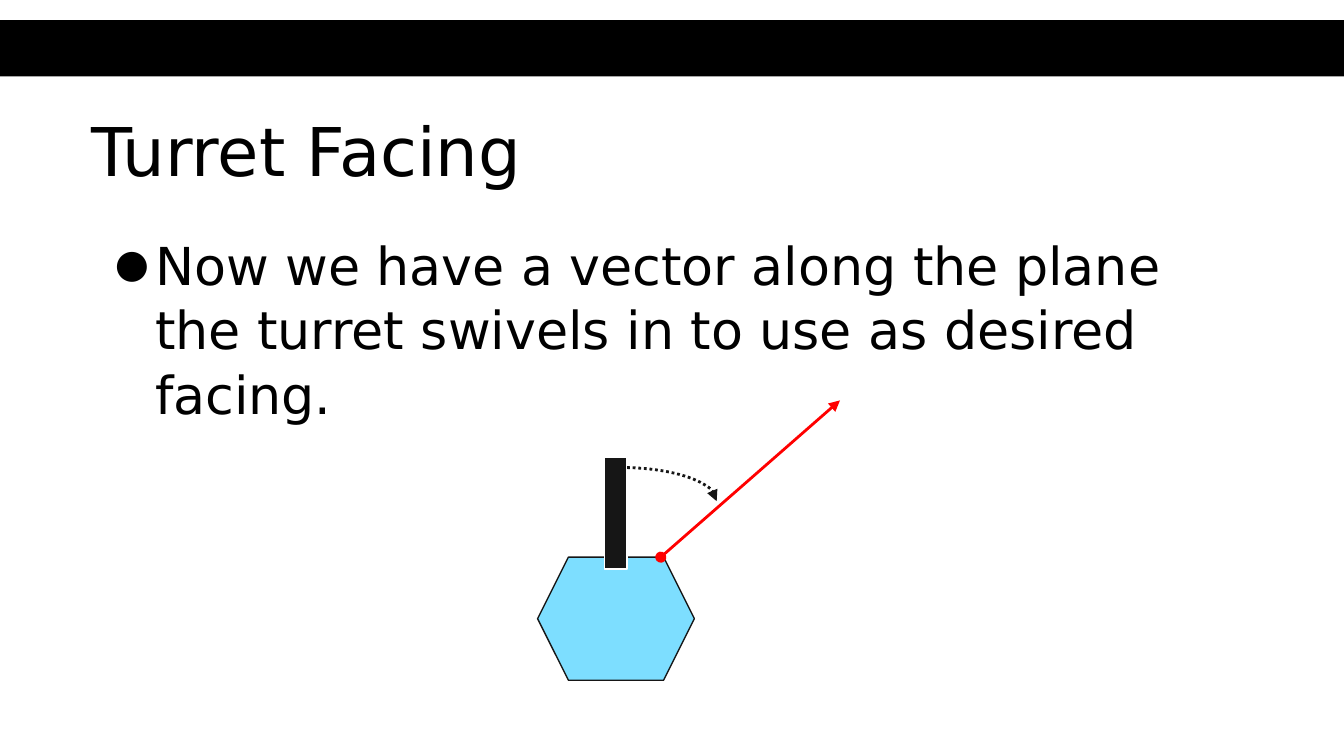
from dataclasses import dataclass
from typing import Optional

from lxml.etree import SubElement
from pptx import Presentation
from pptx.dml.color import RGBColor
from pptx.enum.dml import MSO_LINE_DASH_STYLE as Dash
from pptx.enum.shapes import MSO_CONNECTOR_TYPE as Connector
from pptx.enum.shapes import MSO_SHAPE as Shape
from pptx.enum.text import MSO_ANCHOR as Anchor
from pptx.enum.text import MSO_AUTO_SIZE as AutoSize
from pptx.enum.text import PP_ALIGN as Align
from pptx.oxml.ns import qn
from pptx.util import Pt


@dataclass(frozen=True)
class Theme:
    font: str = "DejaVu Sans"
    title_size: float = 36
    body_size: float = 28
    black: str = "000000"
    white: str = "FFFFFF"
    ink: str = "161616"
    base_blue: str = "7DDEFF"
    vector_red: str = "FF0000"
    thin: float = 0.75
    thick: float = 1.5


@dataclass(frozen=True)
class Part:
    kind: Shape
    left: float
    top: float
    width: float
    height: float
    fill: Optional[str] = None
    line: Optional[str] = None
    weight: float = 0


THEME = Theme()
BAND = Part(Shape.RECTANGLE, 0, 10.8, 720, 30.2, THEME.black)
TURRET = [
    Part(Shape.HEXAGON, 288, 298.5, 84, 66, THEME.base_blue, THEME.ink, THEME.thin),
    Part(Shape.RECTANGLE, 324, 244.8, 12, 60, THEME.ink, THEME.white, THEME.thin),
]
SWIVEL = Part(Shape.ARC, 282, 250.5, 102, 36, None, THEME.ink, THEME.thick)


def color(value: str) -> RGBColor:
    return RGBColor.from_string(value)


def draw_part(page, part: Part):
    shape = page.shapes.add_shape(
        part.kind, Pt(part.left), Pt(part.top), Pt(part.width), Pt(part.height)
    )
    shape.shadow.inherit = False
    if part.fill:
        shape.fill.solid()
        shape.fill.fore_color.rgb = color(part.fill)
    else:
        shape.fill.background()
    if part.line:
        shape.line.color.rgb = color(part.line)
        shape.line.width = Pt(part.weight)
    else:
        shape.line.fill.background()
    return shape


def add_line_ends(shape, head: Optional[str], tail: str) -> None:
    outline = shape.line._get_or_add_ln()
    if head:
        SubElement(outline, qn("a:headEnd"), type=head)
    SubElement(outline, qn("a:tailEnd"), type=tail)


def draw_vector(page) -> None:
    vector = page.shapes.add_connector(
        Connector.STRAIGHT, Pt(354), Pt(298.5), Pt(450), Pt(214.5)
    )
    vector.line.color.rgb = color(THEME.vector_red)
    vector.line.width = Pt(THEME.thick)
    add_line_ends(vector, "oval", "triangle")
    SubElement(vector._element.spPr, qn("a:effectLst"))


def write_text(box, text: str, size: float, inset_top: float):
    frame = box.text_frame
    frame.text = text
    frame.word_wrap = True
    frame.auto_size = AutoSize.NONE
    frame.vertical_anchor = Anchor.TOP
    frame.margin_left = frame.margin_right = Pt(7.2)
    frame.margin_top = Pt(inset_top)
    para = frame.paragraphs[0]
    para.alignment = Align.LEFT
    for span in para.runs:
        span.font.name = THEME.font
        span.font.size = Pt(size)
        span.font.color.rgb = color(THEME.black)
    return para


def add_bullet(para) -> None:
    props = para._p.get_or_add_pPr()
    props.set("marL", str(Pt(34)))
    props.set("indent", str(Pt(-21.6)))
    tint = SubElement(props, qn("a:buClr"))
    SubElement(tint, qn("a:srgbClr"), val=THEME.black)
    SubElement(props, qn("a:buSzPct"), val="75000")
    SubElement(props, qn("a:buFont"), typeface=THEME.font)
    SubElement(props, qn("a:buChar"), char="●")


def main() -> None:
    deck = Presentation()
    deck.slide_width, deck.slide_height = Pt(720), Pt(405)
    page = deck.slides.add_slide(deck.slide_layouts[5])

    draw_part(page, BAND)

    title = page.shapes.title
    title.left, title.top = Pt(42), Pt(52.5)
    title.width, title.height = Pt(636), Pt(61)
    write_text(title, "Turret Facing", THEME.title_size, 6.2)

    body = page.shapes.add_textbox(Pt(42), Pt(118.8), Pt(636), Pt(102))
    para = write_text(
        body,
        "Now we have a vector along the plane the turret swivels in "
        "to use as desired facing.",
        THEME.body_size,
        5,
    )
    para.line_spacing = 1.03
    add_bullet(para)

    for part in TURRET:
        draw_part(page, part)
    draw_vector(page)
    swivel = draw_part(page, SWIVEL)
    swivel.line.dash_style = Dash.ROUND_DOT
    add_line_ends(swivel, None, "triangle")

    deck.save("out.pptx")


if __name__ == "__main__":
    main()
